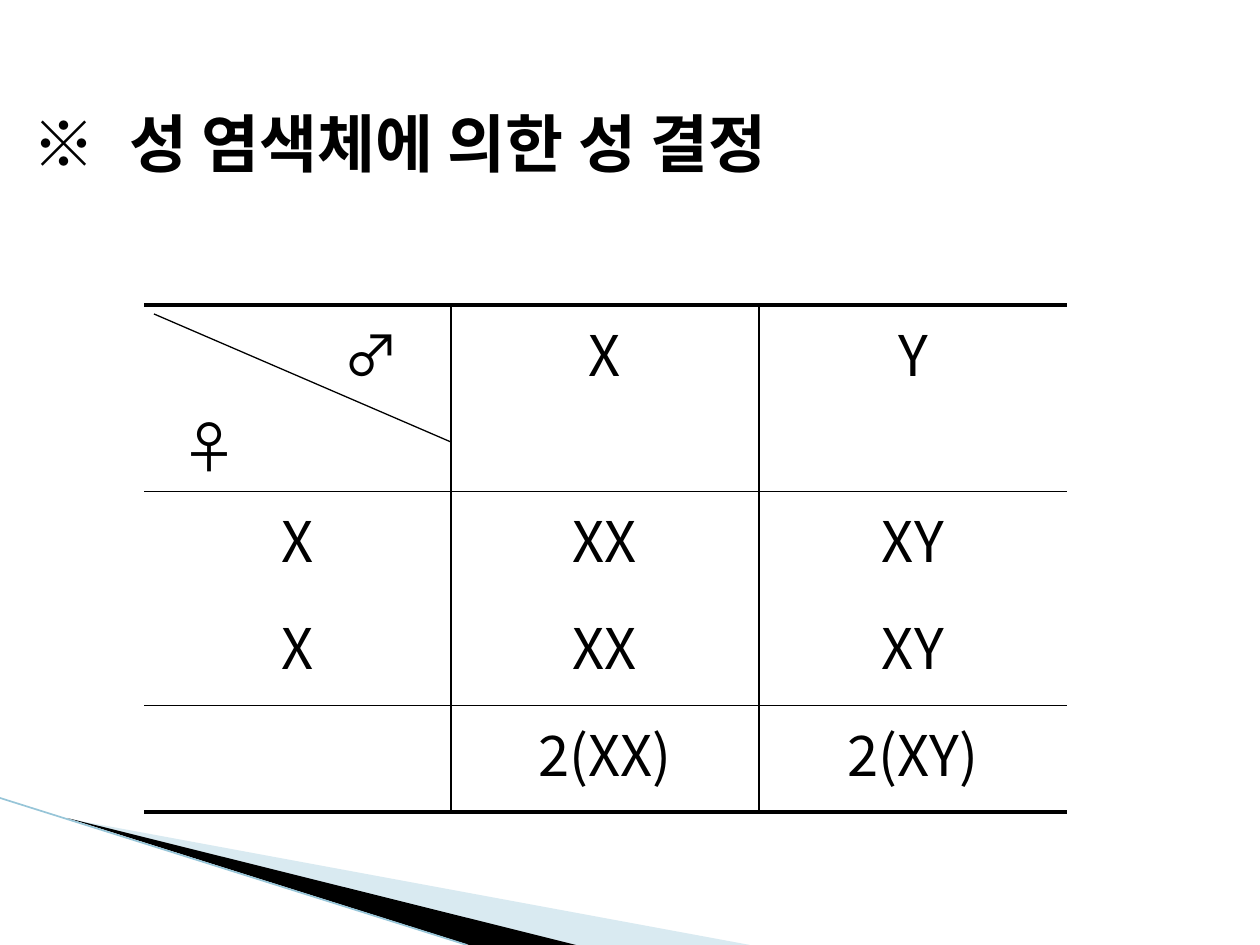
import lxml.etree
import pptx
import pptx.dml.color
import pptx.enum.shapes
import pptx.enum.text
import pptx.oxml
import pptx.oxml.ns
import pptx.util

BLACK = pptx.dml.color.RGBColor(0x00, 0x00, 0x00)
PALE = pptx.dml.color.RGBColor(0xA0, 0xCB, 0xDC)
BLUE = pptx.dml.color.RGBColor(0x97, 0xC5, 0xD8)
ALIGN = pptx.enum.text.PP_ALIGN
qn = pptx.oxml.ns.qn


def px(n):
    return pptx.util.Emu(round(n * 914400 / 126))


class Deck:
    """Hold the text style and the current slide, and add elements to it."""

    title_font = "Noto Sans Mono"
    body_font = "Noto Sans CJK KR"

    def __init__(self, width, height):
        self.prs = pptx.Presentation()
        self.prs.slide_width, self.prs.slide_height = px(width), px(height)
        self.s = self.prs.slides.add_slide(self.prs.slide_layouts[5])

    def run(self, p, text, size, font, bold=False):
        r = p.add_run()
        r.text = text
        r.font.size = pptx.util.Pt(size)
        r.font.name = font
        r.font.bold = bold
        r.font.color.rgb = BLACK
        ea = lxml.etree.Element(qn("a:ea"), typeface=self.body_font)
        r.font._element.find(qn("a:latin")).addnext(ea)

    def title(self, mark, text, box, tab):
        sp = self.s.shapes.title
        sp.left, sp.top, sp.width, sp.height = map(px, box)
        tf = sp.text_frame
        tf.word_wrap = True
        tf.vertical_anchor = pptx.enum.text.MSO_ANCHOR.MIDDLE
        p = tf.paragraphs[0]
        p.alignment = ALIGN.LEFT
        tabs = lxml.etree.SubElement(p._p.get_or_add_pPr(), qn("a:tabLst"))
        lxml.etree.SubElement(tabs, qn("a:tab"), pos=str(px(tab)), algn="l")
        self.run(p, mark + "\t" + text, 36, self.title_font, True)

    def wedge(self, points, color, alpha=None):
        fb = self.s.shapes.build_freeform(*points[0], scale=px(1))
        fb.add_line_segments(points[1:], close=True)
        sp = fb.convert_to_shape()
        sp.shadow.inherit = False
        sp.fill.solid()
        sp.fill.fore_color.rgb = color
        sp.line.fill.background()
        if alpha is not None:
            clr = sp._element.spPr.find(".//" + qn("a:srgbClr"))
            lxml.etree.SubElement(clr, qn("a:alpha"), val=str(alpha * 1000))

    def line(self, start, end, color, width):
        cx = self.s.shapes.add_connector(
            pptx.enum.shapes.MSO_CONNECTOR.STRAIGHT, *map(px, start + end))
        cx.line.color.rgb = color
        cx.line.width = pptx.util.Pt(width)
        lxml.etree.SubElement(cx._element.spPr, qn("a:effectLst"))

    def border(self, cell, widths):
        tc_pr = cell._tc.get_or_add_tcPr()
        for i, (side, width) in enumerate(zip("LRTB", widths)):
            ln = lxml.etree.Element(qn("a:ln" + side), w=str(pptx.util.Pt(width)))
            if width:
                fill = lxml.etree.SubElement(ln, qn("a:solidFill"))
                lxml.etree.SubElement(fill, qn("a:srgbClr"), val=str(BLACK))
            else:
                lxml.etree.SubElement(ln, qn("a:noFill"))
            tc_pr.insert(i, ln)

    def paragraph(self, p, text, align=ALIGN.CENTER, indent=0):
        p.alignment = align
        if indent:
            p._p.get_or_add_pPr().set("marL", str(px(indent)))
            p._p.get_or_add_pPr().set("indent", "0")
        self.run(p, text, 32, self.body_font)

    def table(self, left, top, cols, rows, values, rules):
        table = self.s.shapes.add_table(
            len(rows), len(cols), px(left), px(top), px(sum(cols)), px(sum(rows))).table
        table.first_row = table.horz_banding = False
        for col, width in zip(table.columns, cols):
            col.width = px(width)
        for row, height in zip(table.rows, rows):
            row.height = px(height)
        for i, line in enumerate(values):
            for j, text in enumerate(line):
                cell = table.cell(i, j)
                cell.fill.background()
                self.border(cell, (int(j > 0), int(j < len(cols) - 1),
                                   rules[i], rules[i + 1]))
                if text:
                    self.paragraph(cell.text_frame.paragraphs[0], text)
        return table


def main():
    deck = Deck(1260, 945)
    deck.wedge([(69, 819), (750, 945), (575, 945)], PALE, 40)
    deck.wedge([(67, 818), (576, 945), (469, 945)], BLACK)
    deck.line((0, 798), (467, 945), BLUE, 0.95)
    deck.title("※", "성 염색체에 의한 성 결정", (20, 78, 1037, 129), 97)
    table = deck.table(
        144, 305, [307, 308, 308], [186, 107, 107, 107],
        [["", "X", "Y"], ["X", "XX", "XY"], ["X", "XX", "XY"], ["", "2(XX)", "2(XY)"]],
        [2.25, 1, 0, 1, 2.25])
    tf = table.cell(0, 0).text_frame
    deck.paragraph(tf.paragraphs[0], "♂", indent=148)
    p = tf.add_paragraph()
    p.space_before = pptx.util.Pt(6.4)
    deck.paragraph(p, "♀", ALIGN.LEFT, 25)
    deck.line((154, 314), (451, 442), BLACK, 0.75)
    deck.prs.save("out.pptx")


if __name__ == "__main__":
    main()
